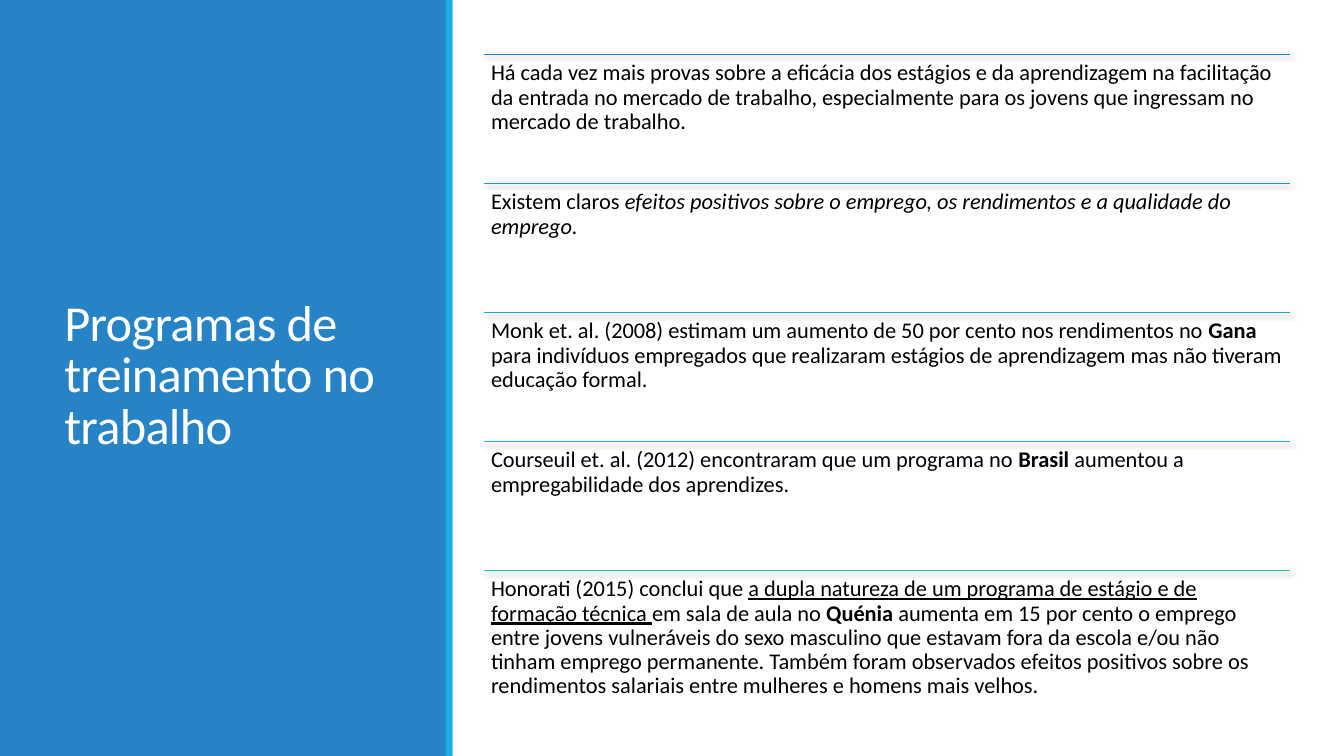
import pptx
import pptx.util
import pptx.dml.color
import pptx.enum.shapes
import pptx.enum.text
import pptx.oxml
from pptx.util import Inches

SHADOW = """<a:effectLst xmlns:a="http://schemas.openxmlformats.org/drawingml/2006/main">
<a:outerShdw blurRad="44450" dist="25400" dir="2700000" algn="br" rotWithShape="0">
<a:srgbClr val="000000"><a:alpha val="60000"/></a:srgbClr></a:outerShdw></a:effectLst>"""


def color(hex_value):
    return pptx.dml.color.RGBColor.from_string(hex_value)


def add_run(paragraph, text, size, hex_value):
    run = paragraph.add_run()
    run.text = text
    run.font.size = pptx.util.Pt(size)
    run.font.name = "Calibri"
    run.font.color.rgb = color(hex_value)
    return run


# Each finding: line colour, then (text, emphasis) pieces
findings = [
    ("2683C6", [("Há cada vez mais provas sobre a eficácia dos estágios e da aprendizagem na "
                 "facilitação da entrada no mercado de trabalho, especialmente para os jovens "
                 "que ingressam no mercado de trabalho.", "")]),
    ("2693C8", [("Existem claros ", ""),
                ("efeitos positivos sobre o emprego, os rendimentos e a qualidade do emprego.",
                 "italic")]),
    ("27A3C9", [("Monk et. al. (2008) estimam um aumento de 50 por cento nos rendimentos no ", ""),
                ("Gana", "bold"),
                (" para indivíduos empregados que realizaram estágios de aprendizagem mas não "
                 "tiveram educação formal.", "")]),
    ("27B3CB", [("Courseuil et. al. (2012) encontraram que um programa no ", ""),
                ("Brasil ", "bold"),
                ("aumentou a empregabilidade dos aprendizes.", "")]),
    ("28C4CC", [("Honorati (2015) conclui que ", ""),
                ("a dupla natureza de um programa de estágio e de formação técnica ", "underline"),
                ("em sala de aula no ", ""),
                ("Quénia", "bold"),
                (" aumenta em 15 por cento o emprego entre jovens vulneráveis do sexo masculino "
                 "que estavam fora da escola e/ou não tinham emprego permanente. Também foram "
                 "observados efeitos positivos sobre os rendimentos salariais entre mulheres e "
                 "homens mais velhos.", "")]),
]

presentation = pptx.Presentation()
presentation.slide_width = Inches(13.33)
presentation.slide_height = Inches(7.5)
slide = presentation.slides.add_slide(presentation.slide_layouts[6])
slide.background.fill.solid()
slide.background.fill.fore_color.rgb = color("FFFFFF")

# Side panel and its accent stripe
for left, width, fill in [(0, 4.43, "2683C6"), (4.42, 0.07, "1CADE4")]:
    panel = slide.shapes.add_shape(pptx.enum.shapes.MSO_SHAPE.RECTANGLE,
                                   Inches(left), 0, Inches(width), Inches(7.5))
    panel.shadow.inherit = False
    panel.fill.solid()
    panel.fill.fore_color.rgb = color(fill)
    panel.line.fill.background()

# Title
title = slide.shapes.add_textbox(Inches(0.54), Inches(0.66), Inches(3.37), Inches(6.17))
title.text_frame.word_wrap = True
title.text_frame.vertical_anchor = pptx.enum.text.MSO_ANCHOR.MIDDLE
heading = title.text_frame.paragraphs[0]
heading.line_spacing = 0.85
heading_run = add_run(heading, "Programas de treinamento no trabalho", 36, "FFFFFF")
heading_run.font._element.set("spc", "-50")

# Findings, each under a shadowed rule
list_left, list_top, list_width, row_height = 4.8, 0.54, 7.99, 1.28
for row, (rule_color, pieces) in enumerate(findings):
    top = Inches(list_top + row * row_height)
    rule = slide.shapes.add_connector(pptx.enum.shapes.MSO_CONNECTOR.STRAIGHT, Inches(list_left),
                                      top, Inches(list_left + list_width), top)
    rule.line.color.rgb = color(rule_color)
    rule.line.width = pptx.util.Pt(1)
    rule._element.spPr.append(pptx.oxml.parse_xml(SHADOW))

    finding = slide.shapes.add_textbox(Inches(list_left), top,
                                       Inches(list_width), Inches(row_height))
    frame = finding.text_frame
    frame.word_wrap = True
    frame.margin_left = frame.margin_right = Inches(0.07)
    frame.margin_top = frame.margin_bottom = Inches(0.07)
    paragraph = frame.paragraphs[0]
    paragraph.line_spacing = 0.9
    for text, emphasis in pieces:
        run = add_run(paragraph, text, 16, "000000")
        if emphasis:
            setattr(run.font, emphasis, True)

presentation.save("out.pptx")
